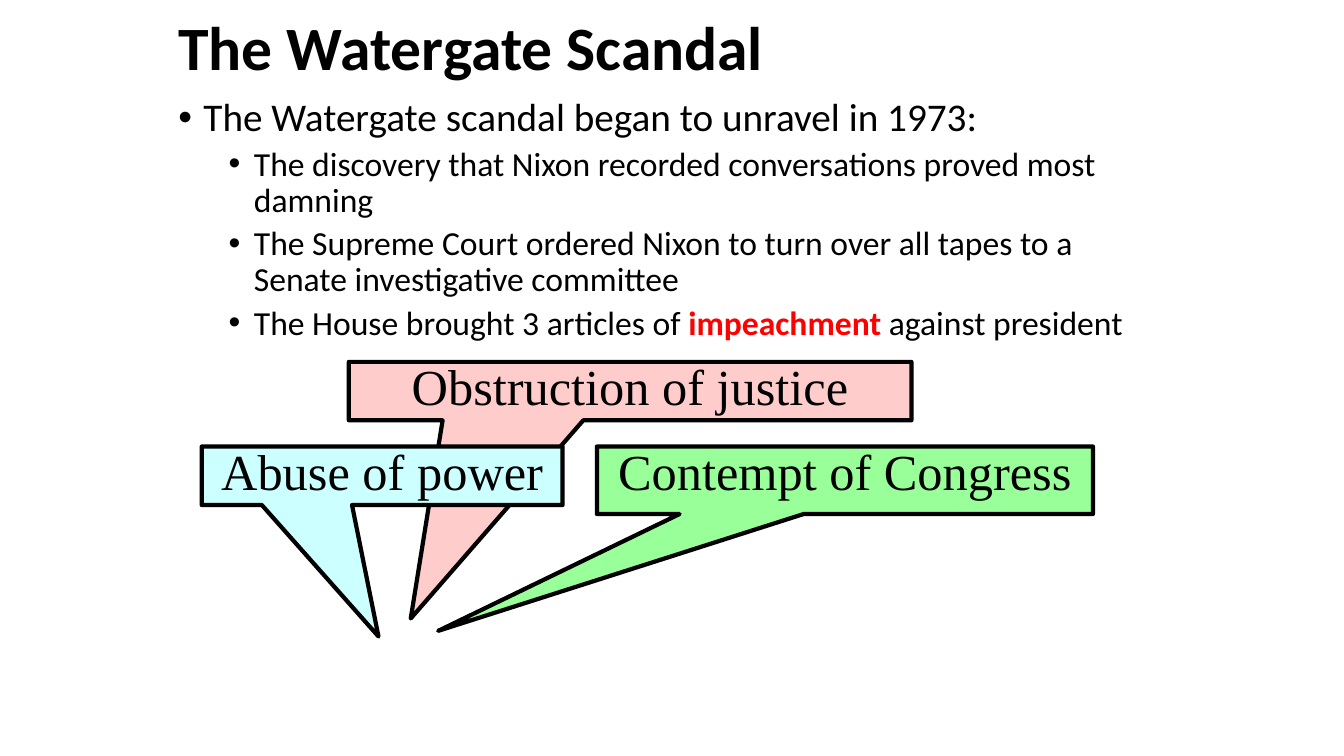
from pptx import Presentation
from pptx.dml.color import RGBColor
from pptx.enum.shapes import MSO_SHAPE
from pptx.enum.text import MSO_ANCHOR, PP_ALIGN
from pptx.oxml import parse_xml
from pptx.oxml.ns import nsdecls
from pptx.util import Inches, Pt

# Content
TITLE = "The Watergate Scandal"
TITLE_BOX = (1.67, 0, 9.75, 1)
BODY_BOX = (1.67, 0.92, 10, 6.58)
BLACK, RED = "000000", "FF0000"

# Bullets: level, then runs of (text, is key term)
BULLETS = [
    (0, [("The Watergate scandal began to unravel in 1973:", False)]),
    (1, [("The discovery that Nixon recorded conversations proved most damning", False)]),
    (1, [("The Supreme Court ordered Nixon to turn over all tapes to a "
          "Senate investigative committee", False)]),
    (1, [("The House brought 3 articles of ", False), ("impeachment ", True),
         ("against president", False)]),
]
# Per level: text size, space before, left indent
LEVELS = [(28, 10, 0.25), (24, 5, 0.75)]
HANGING = 0.25

# Callouts: text, box, pointer offset as a share of the box, fill
CALLOUTS = [
    ("Obstruction of justice", (3.46, 3.59, 5.58, 0.58), (-0.39, 3.89), "FFCCCC"),
    ("Abuse of power", (2, 4.43, 3.58, 0.58), (-0.01, 2.75), "CCFFFF"),
    ("Contempt of Congress", (5.92, 4.43, 4.92, 0.67), (-0.82, 2.23), "99FF99"),
]


def color(value):
    return RGBColor.from_string(value)


def apply_format(target, values):
    for name, value in values.items():
        setattr(target, name, value)


def add_run(paragraph, text, size, font="Calibri", bold=False, ink=BLACK):
    run = paragraph.add_run()
    run.text = text
    apply_format(run.font, {"size": Pt(size), "name": font, "bold": bold})
    run.font.color.rgb = color(ink)


def add_text_frame(slide, box, anchor):
    frame = slide.shapes.add_textbox(*map(Inches, box)).text_frame
    apply_format(frame, {"word_wrap": True, "vertical_anchor": anchor})
    return frame


def add_bullet(paragraph, level, runs):
    size, space, indent = LEVELS[level]
    apply_format(paragraph, {"level": level, "line_spacing": 0.9, "space_before": Pt(space)})
    properties = paragraph._p.get_or_add_pPr()
    properties.set("marL", str(Inches(indent)))
    properties.set("indent", str(-Inches(HANGING)))
    for tag in ('buFont %s typeface="Arial"', 'buChar %s char="•"'):
        properties.append(parse_xml(f"<a:{tag % nsdecls('a')}/>"))
    for text, is_key in runs:
        add_run(paragraph, text, size, bold=is_key, ink=RED if is_key else BLACK)


def add_callout(slide, text, box, pointer, fill):
    shape = slide.shapes.add_shape(MSO_SHAPE.RECTANGULAR_CALLOUT, *map(Inches, box))
    shape.shadow.inherit = False
    for index, offset in enumerate(pointer):
        shape.adjustments[index] = offset
    shape.fill.solid()
    shape.fill.fore_color.rgb = color(fill)
    shape.line.color.rgb = color(BLACK)
    shape.line.width = Pt(3)
    frame = shape.text_frame
    apply_format(frame, {"word_wrap": True, "vertical_anchor": MSO_ANCHOR.TOP})
    paragraph = frame.paragraphs[0]
    apply_format(paragraph, {"alignment": PP_ALIGN.CENTER, "line_spacing": 0.8})
    add_run(paragraph, text, 36, font="Times New Roman")


def main():
    presentation = Presentation()
    presentation.slide_width = Inches(13.33)
    presentation.slide_height = Inches(7.5)
    slide = presentation.slides.add_slide(presentation.slide_layouts[6])

    # Title
    heading = add_text_frame(slide, TITLE_BOX, MSO_ANCHOR.MIDDLE).paragraphs[0]
    heading.line_spacing = 0.9
    add_run(heading, TITLE, 44, bold=True)

    # Bulleted body
    body = add_text_frame(slide, BODY_BOX, MSO_ANCHOR.TOP)
    for index, (level, runs) in enumerate(BULLETS):
        paragraph = body.add_paragraph() if index else body.paragraphs[0]
        add_bullet(paragraph, level, runs)

    # Articles of impeachment
    for callout in CALLOUTS:
        add_callout(slide, *callout)

    presentation.save("out.pptx")


if __name__ == "__main__":
    main()
